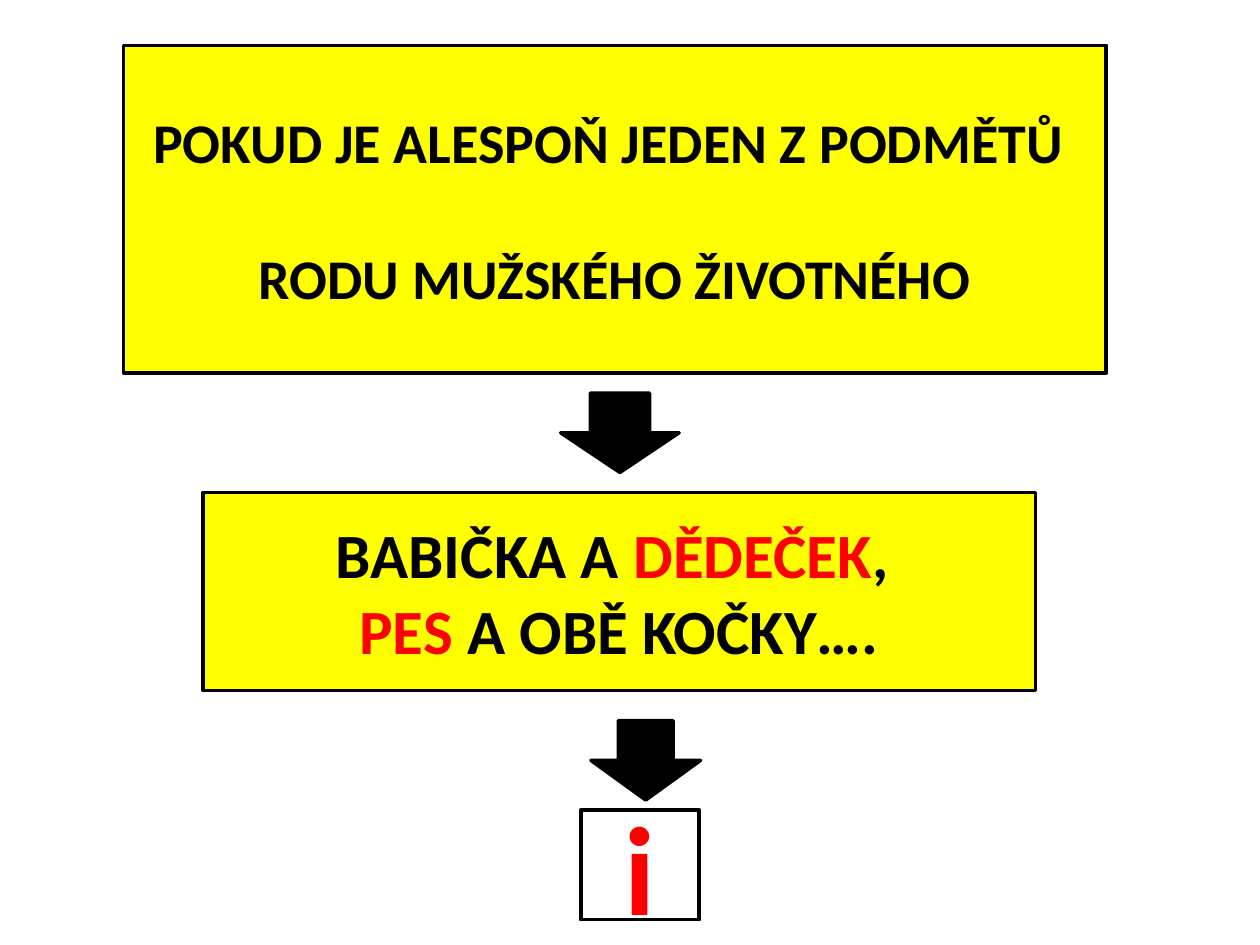
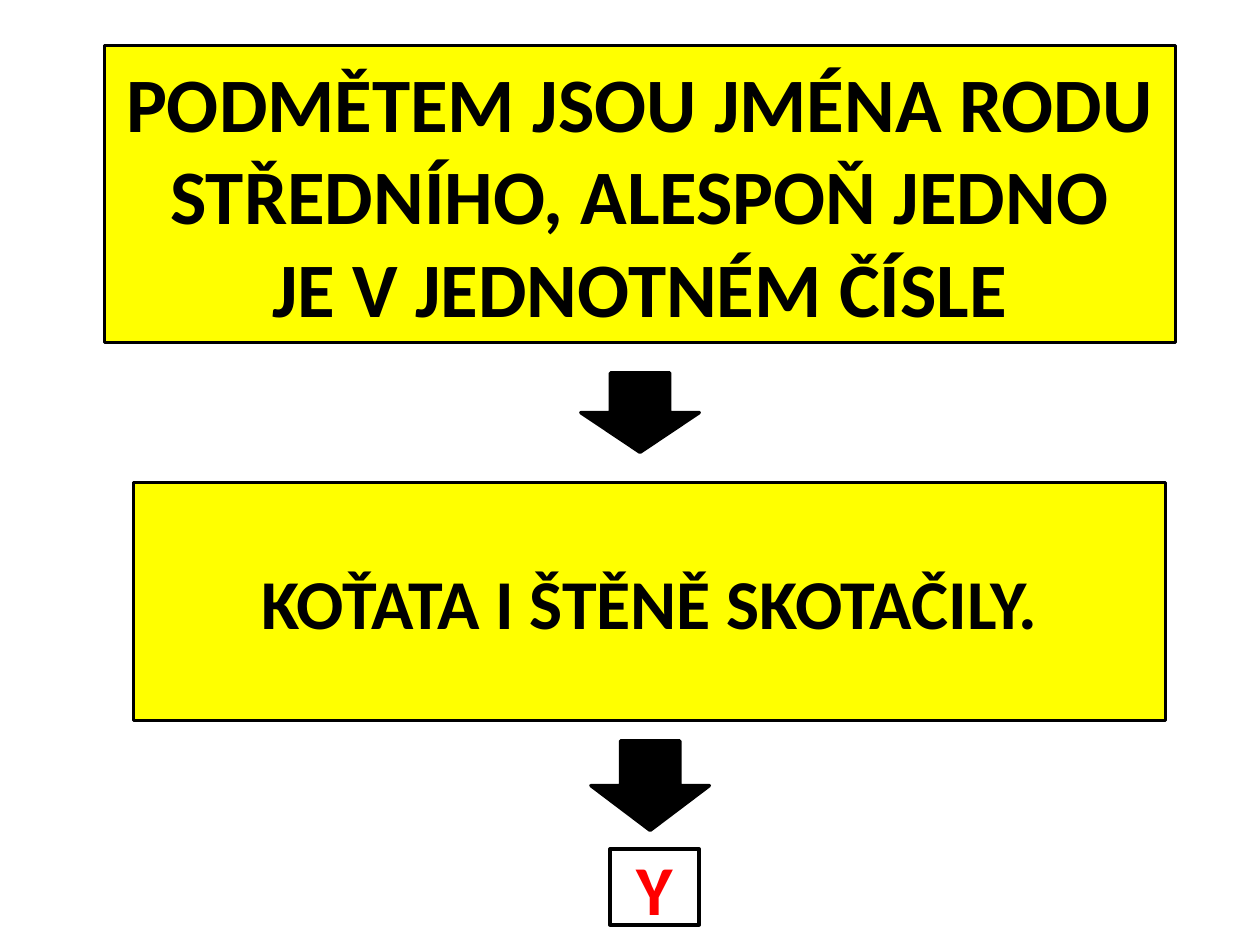
"""Build two flow slides on Czech subject-verb agreement."""
from dataclasses import dataclass
from pptx import Presentation
from pptx.dml.color import RGBColor
from pptx.enum import shapes, text
from pptx.util import Inches, Pt


@dataclass(frozen=True)
class Theme:
    font: str = "Calibri"
    ink: str = "000000"
    hot: str = "FF0000"
    card: str = "FFFF00"
    paper: str = "FFFFFF"
    line: float = 2
    rule: int = 32
    case: int = 36
    mid: int = 40
    head: int = 44
    huge: int = 72


T = Theme()

SLIDES = [
    {
        "cards": [
            {"at": (0.98, 0.36, 7.8, 2.6), "fill": T.card, "size": T.rule, "gap": 39,
             "rows": [[("POKUD JE ALESPOŇ JEDEN Z PODMĚTŮ ", T.ink)],
                      [("RODU MUŽSKÉHO ŽIVOTNÉHO", T.ink)]]},
            {"at": (1.61, 3.91, 6.61, 1.57), "fill": T.card, "size": T.case,
             "rows": [[("BABIČKA A ", T.ink), ("DĚDEČEK", T.hot), (", ", T.ink)],
                      [("PES", T.hot), (" A OBĚ KOČKY….", T.ink)]]},
            {"at": (4.61, 6.43, 0.94, 0.87), "fill": T.paper, "size": T.huge,
             "rows": [[("i", T.hot)]]},
        ],
        "arrows": [(4.45, 3.12, 0.94, 0.63), (4.69, 5.72, 0.87, 0.63)],
    },
    {
        "cards": [
            {"at": (0.83, 0.36, 8.5, 2.36), "fill": T.card, "size": T.head,
             "rows": [[("PODMĚTEM JSOU JMÉNA RODU", T.ink)],
                      [("STŘEDNÍHO, ALESPOŇ JEDNO", T.ink)],
                      [("JE V JEDNOTNÉM ČÍSLE", T.ink)]]},
            {"at": (1.06, 3.83, 8.19, 1.89), "fill": T.card, "size": T.mid,
             "rows": [[("KOŤATA I ŠTĚNĚ SKOTAČILY.", T.ink)]]},
            {"at": (4.84, 6.74, 0.71, 0.6), "fill": T.paper, "size": T.mid,
             "rows": [[("Y", T.hot)]]},
        ],
        "arrows": [(4.61, 2.96, 0.94, 0.63), (4.69, 5.88, 0.94, 0.71)],
    },
]


def add_block(slide, kind, at, fill):
    block = slide.shapes.add_shape(kind, *map(Inches, at))
    block.shadow.inherit = False
    block.fill.solid()
    block.fill.fore_color.rgb = RGBColor.from_string(fill)
    block.line.color.rgb = RGBColor.from_string(T.ink)
    block.line.width = Pt(T.line)
    return block


def add_card(slide, card):
    block = add_block(slide, shapes.MSO_SHAPE.RECTANGLE, card["at"], card["fill"])
    frame = block.text_frame
    frame.word_wrap = True
    frame.vertical_anchor = text.MSO_ANCHOR.MIDDLE
    for i, row in enumerate(card["rows"]):
        para = frame.add_paragraph() if i else frame.paragraphs[0]
        para.alignment = text.PP_ALIGN.CENTER
        if i:
            para.space_before = Pt(card.get("gap", 0))
        for words, color in row:
            run = para.add_run()
            run.text = words
            run.font.name = T.font
            run.font.size = Pt(card["size"])
            run.font.bold = True
            run.font.color.rgb = RGBColor.from_string(color)


def main():
    deck = Presentation()
    deck.slide_width, deck.slide_height = Inches(10), Inches(7.5)
    for page in SLIDES:
        slide = deck.slides.add_slide(deck.slide_layouts[6])
        for card in page["cards"]:
            add_card(slide, card)
        for at in page["arrows"]:
            add_block(slide, shapes.MSO_SHAPE.DOWN_ARROW, at, T.ink)
    deck.save("out.pptx")


if __name__ == "__main__":
    main()
